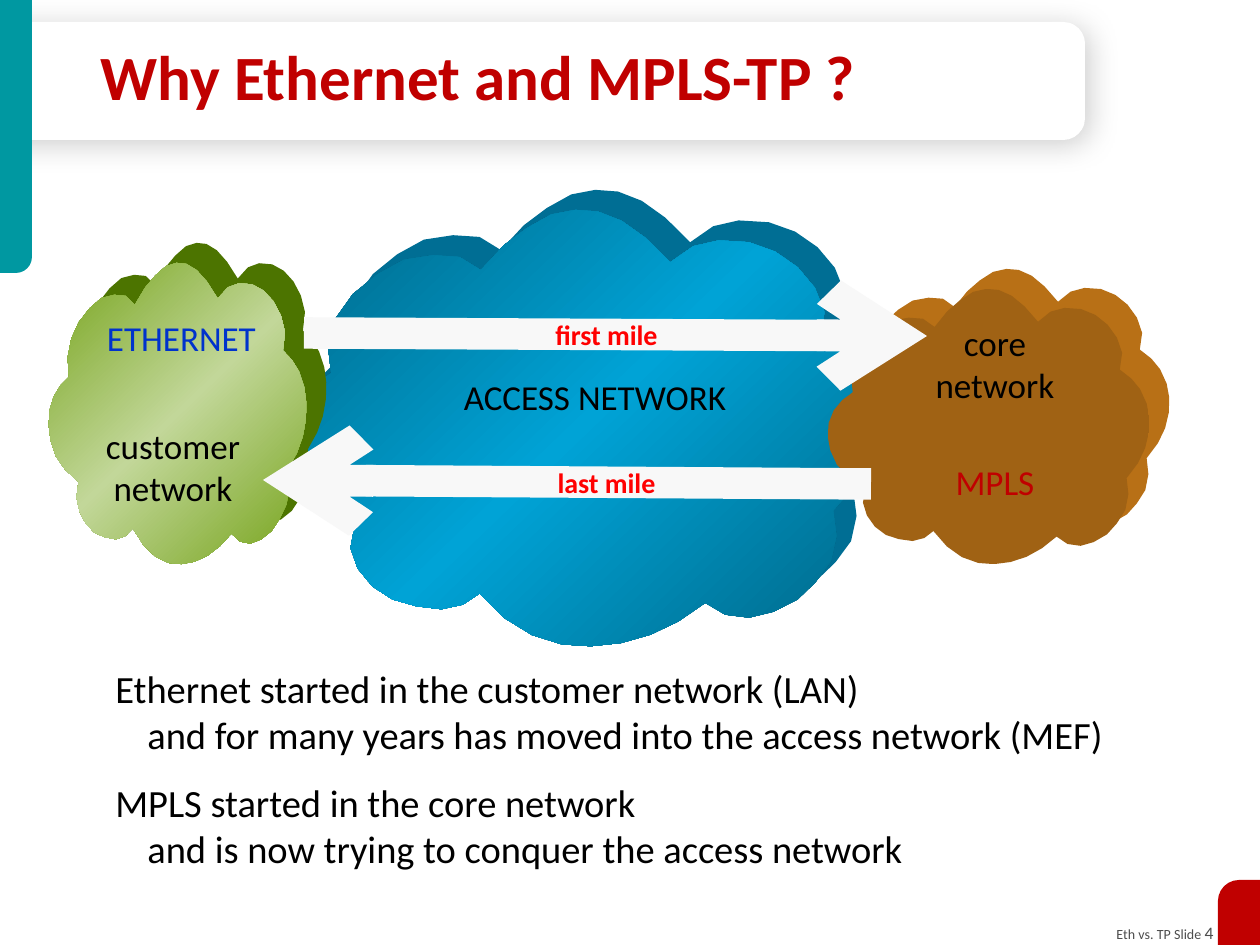
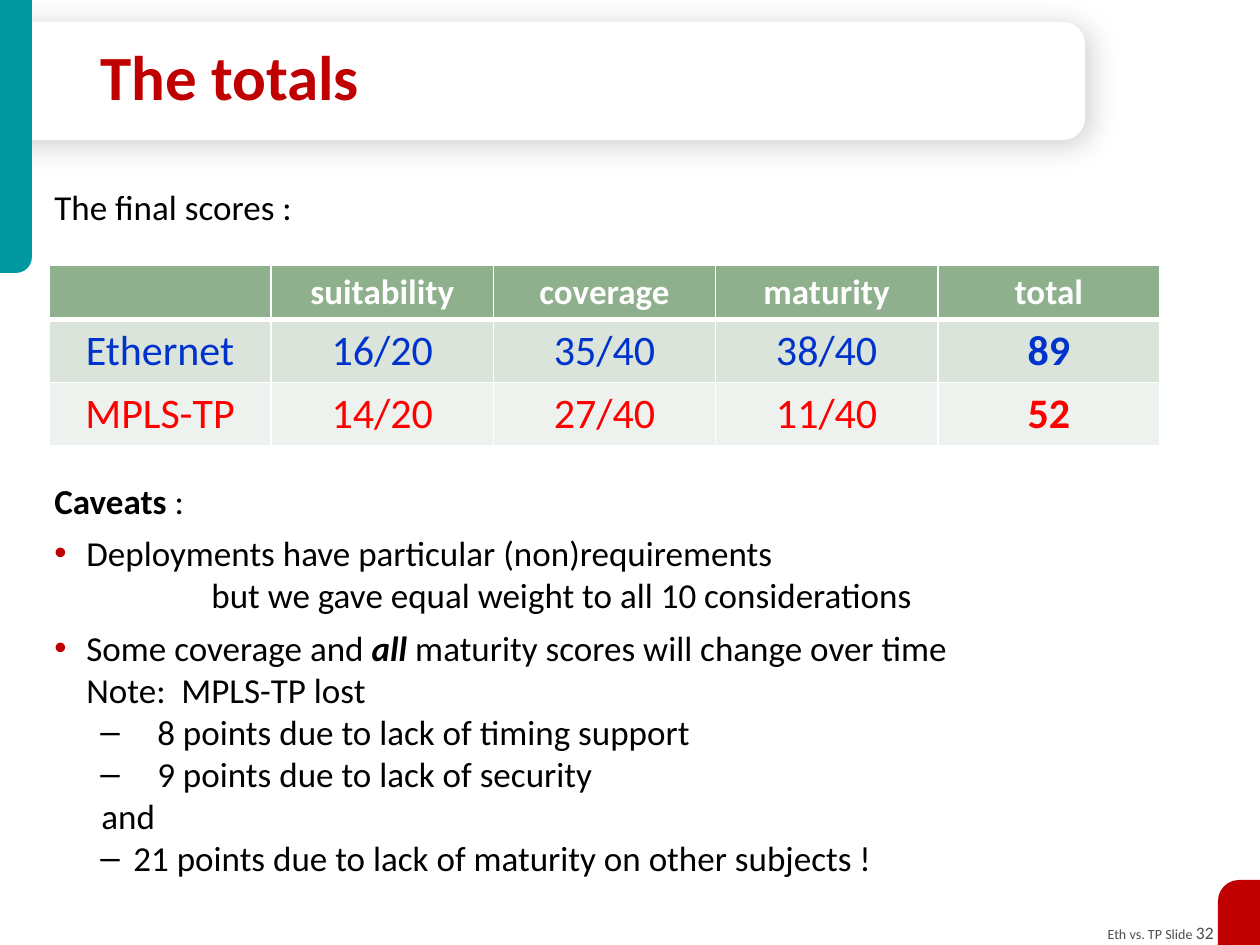
from lxml.etree import SubElement as sub
from pptx import Presentation
from pptx.dml.color import RGBColor as RGB
from pptx.enum.shapes import MSO_CONNECTOR as LINK, MSO_SHAPE as SHAPE
from pptx.enum.text import MSO_ANCHOR as ANCHOR, PP_ALIGN as ALIGN
from pptx.oxml.ns import qn
from pptx.util import Pt

FONT = "Calibri"
BLACK, WHITE = RGB(0, 0, 0), RGB(255, 255, 255)
GREY, PALE = RGB(0x4D, 0x4D, 0x4D), RGB(0xF8, 0xF8, 0xF8)
TEAL, CRIMSON = RGB(0, 0x98, 0xA1), RGB(0xC0, 0, 0)
RED, BLUE = RGB(255, 0, 0), RGB(0, 0x33, 0xCC)
SAGE, MIST, FOG = RGB(0x8F, 0xB0, 0x8C), RGB(0xDB, 0xE4, 0xDA), RGB(0xEE, 0xF2, 0xEE)
# Cloud colours: face edge, face middle, side
OCEAN = RGB(0, 0x65, 0x84), RGB(0, 0xA3, 0xD6), RGB(0, 0x6E, 0x94)
EARTH = RGB(0xA0, 0x62, 0x14), RGB(0xA0, 0x62, 0x14), RGB(0xB8, 0x70, 0x16)
GRASS = RGB(0x74, 0xA2, 0x18), RGB(0xC2, 0xD7, 0x99), RGB(0x4C, 0x74, 0)

DEPTH = 20
CLOUD_W, CLOUD_H = 466, 345
CLOUD = [
    (152, 49), (135, 39), (114, 38), (91, 42), (70, 54), (51, 70), (38, 89), (32, 111),
    (35, 133), (20, 143), (8, 156), (1, 172), (0, 189), (4, 206), (14, 224), (31, 239),
    (56, 253), (53, 271), (59, 287), (71, 301), (87, 311), (106, 316), (126, 318), (143, 314),
    (156, 305), (176, 324), (198, 337), (222, 344), (245, 345), (269, 342), (292, 335), (314, 324),
    (335, 309), (351, 318), (370, 320), (389, 315), (408, 305), (422, 291), (434, 274), (438, 254),
    (435, 234), (451, 215), (461, 196), (466, 176), (466, 157), (462, 140), (452, 122), (439, 109),
    (422, 98), (425, 77), (417, 58), (403, 42), (385, 30), (364, 23), (340, 22), (320, 27),
    (302, 40), (282, 21), (263, 8), (244, 1), (226, 0), (207, 4), (188, 15), (170, 29),
]


def px(n):
    return int(n * 914400 / 126)


def emu(box):
    return [px(n) for n in box]


def shift(box, x, y):
    return (box[0] + x, box[1] + y, *box[2:])


def style(run, size, color, bold=False):
    font = run.font
    font.name, font.size, font.bold = FONT, Pt(size), bold
    font.color.rgb = color


def write(slide, box, lines, size, color=BLACK, bold=False, align=ALIGN.LEFT):
    """Add a text box with one paragraph per line and return its frame."""
    frame = slide.shapes.add_textbox(*emu(box)).text_frame
    frame.word_wrap = True
    frame.text = "\n".join(lines)
    for par in frame.paragraphs:
        par.alignment = align
        for run in par.runs:
            style(run, size, color, bold)
    return frame


def indent(par, left, hang=0, mark=None, tint=BLACK):
    """Set left margin and hanging indent, with a bullet if mark is given."""
    props = par._p.get_or_add_pPr()
    props.set("marL", str(px(left)))
    props.set("indent", str(-px(hang)))
    if mark:
        sub(sub(props, qn("a:buClr")), qn("a:srgbClr"), val=str(tint))
        sub(props, qn("a:buFont"), typeface="Arial")
        sub(props, qn("a:buChar"), char=mark)


def panel(slide, kind, box, color, flip=None):
    shape = slide.shapes.add_shape(kind, *emu(box))
    shape.shadow.inherit = False
    shape.fill.solid()
    shape.fill.fore_color.rgb = color
    shape.line.fill.background()
    if flip:
        shape.adjustments[0] = 0.5
        shape._element.spPr.find(qn("a:xfrm")).set(flip, "1")
    return shape


def banner(slide, box):
    """Draw the title card, a tall shape turned a quarter to the right."""
    x, y, w, h = box
    turn = (w - h) / 2
    card = panel(slide, SHAPE.ROUND_2_SAME_RECTANGLE, (x + turn, y - turn, h, w), WHITE)
    card.rotation = 90
    card.adjustments[0] = 0.184
    card.adjustments[1] = 0
    effects = card._element.spPr.find(qn("a:effectLst"))
    shade = sub(effects, qn("a:outerShdw"), blurRad=str(Pt(17)), dist=str(Pt(3)),
                dir="2700000", algn="tl", rotWithShape="0")
    sub(sub(shade, qn("a:srgbClr"), val=str(BLACK)), qn("a:alpha"), val="19000")


def footer(slide, box, number):
    frame = write(slide, box, ["Eth vs. TP Slide "], 8, GREY, align=ALIGN.RIGHT)
    frame.word_wrap = False
    run = frame.paragraphs[0].add_run()
    run.text = str(number)
    style(run, 10, GREY)


def start(deck, title, number):
    """Add a slide with the shared bands, title and footer."""
    slide = deck.slides.add_slide(deck.slide_layouts[6])
    footer(slide, (1091, 916, 135, 34), number)
    banner(slide, (0, 22, 1085, 118))
    panel(slide, SHAPE.ROUND_1_RECTANGLE, (0, 0, 32, 273), TEAL, "flipV")
    panel(slide, SHAPE.ROUND_1_RECTANGLE, (1218, 880, 42, 65), CRIMSON, "flipH")
    frame = write(slide, (88, 37, 932, 89), [title], 36, CRIMSON, True)
    frame.vertical_anchor = ANCHOR.MIDDLE
    frame.paragraphs[0].line_spacing = 0.85
    return slide


def outline(slide, box):
    x, y, w, h = box
    dots = [(px(x + a * w / CLOUD_W), px(y + b * h / CLOUD_H)) for a, b in CLOUD]
    pen = slide.shapes.build_freeform(*dots[0])
    pen.add_line_segments(dots[1:], close=True)
    shape = pen.convert_to_shape()
    shape.rotation = 1.1
    shape.shadow.inherit = False
    shape.line.fill.background()
    return shape


def cloud(slide, box, colors):
    """Draw the side up to the right, then the shaded face."""
    edge, middle, side = colors
    fill = outline(slide, shift(box, DEPTH, -DEPTH)).fill
    fill.solid()
    fill.fore_color.rgb = side
    fill = outline(slide, box).fill
    fill.gradient()
    fill.gradient_angle = 315
    first, last = fill.gradient_stops
    for stop in (first, last):
        stop.color.rgb = edge
    stops = first._gs.getparent()
    center = sub(stops, qn("a:gs"), pos="50000")
    sub(center, qn("a:srgbClr"), val=str(middle))
    stops.insert(1, center)


def arrow(slide, ends):
    line = slide.shapes.add_connector(LINK.STRAIGHT, *emu(ends))
    line.line.color.rgb = PALE
    line.line.width = Pt(18)
    sub(line.line._get_or_add_ln(), qn("a:tailEnd"), type="arrow")
    sub(line._element.spPr, qn("a:effectLst"))


def network(slide, box):
    """Draw the three clouds, their labels and the two mile arrows."""
    x, y = box[:2]
    for spot, colors in (((237, 20, 588, 436), OCEAN),
                         ((779, 99, 321, 275), EARTH),
                         ((0, 73, 257, 301), GRASS)):
        cloud(slide, shift(spot, x, y), colors)
    for spot, lines, color in (
        ((15, 228, 218, 97), ["customer network"], BLACK),
        ((309, 179, 474, 55), ["ACCESS NETWORK"], BLACK),
        ((842, 125, 208, 97), ["core", "network"], BLACK),
        ((-4, 120, 273, 55), ["ETHERNET"], BLUE),
        ((873, 264, 146, 55), ["MPLS"], CRIMSON),
    ):
        write(slide, shift(spot, x, y), lines, 20, color, align=ALIGN.CENTER)
    for x1, y1, x2, y2 in ((255, 143, 878, 146), (822, 294, 214, 290)):
        arrow(slide, (x + x1, y + y1, x + x2, y + y2))
    for top, name in ((121, "first mile"), (269, "last mile")):
        write(slide, (x + 459, y + top, 197, 47), [name], 16, RED, True, ALIGN.CENTER)


def story(slide, box):
    lines = [
        "Ethernet started in the customer network (LAN)\v"
        "and for many years has moved into the access network (MEF)",
        "MPLS started in the core network\vand is now trying to conquer the access network",
    ]
    frame = write(slide, box, lines, 22)
    for par in frame.paragraphs:
        indent(par, 32, 32)
    frame.paragraphs[1].space_before = Pt(12)


def border(cell, bottom):
    props = cell._tc.get_or_add_tcPr()
    for side, width in (("L", 1), ("R", 1), ("T", 1), ("B", bottom)):
        line = sub(props, qn("a:ln" + side), w=str(Pt(width)))
        sub(sub(line, qn("a:solidFill")), qn("a:srgbClr"), val=str(WHITE))


def scores(slide, box):
    rows = [
        (["", "suitability", "coverage", "maturity", "total"], 54, SAGE, WHITE, 20),
        (["Ethernet", "16/20", "35/40", "38/40", "89"], 63, MIST, BLUE, 24),
        (["MPLS-TP", "14/20", "27/40", "11/40", "52"], 63, FOG, RED, 24),
    ]
    count = len(rows[0][0])
    table = slide.shapes.add_table(len(rows), count, *emu(box)).table
    for column in table.columns:
        column.width = px(box[2] / count)
    for r, (texts, height, back, color, size) in enumerate(rows):
        table.rows[r].height = px(height)
        for c, text in enumerate(texts):
            cell = table.cell(r, c)
            border(cell, 1 if r else 3)
            cell.fill.solid()
            cell.fill.fore_color.rgb = back
            par = cell.text_frame.paragraphs[0]
            par.text = text
            par.alignment = ALIGN.CENTER
            for run in par.runs:
                style(run, size, color, r == 0 or c == count - 1)


def caveats(slide, box):
    dot, dash = (32, 32, "•", CRIMSON), (103, 57, "–")
    items = [
        (["Caveats ", ":"], (0,), 0),
        (["Deployments have particular (non)requirements"], dot, 6),
        (["but we gave equal weight to all 10 considerations"], (157,), 0),
        (["Some coverage and ", "all", " maturity scores will change over time"], dot, 6),
        (["Note:  MPLS-TP lost"], (32,), 0),
        (["8 points due to lack of timing support"], dash, 0),
        (["9 points due to lack of security"], dash, 0),
        (["and"], (47,), 0),
        (["21 points due to lack of maturity on other subjects !"], (79, 33, "–"), 0),
    ]
    frame = write(slide, box, [""] * len(items), 20)
    for par, (parts, inset, gap) in zip(frame.paragraphs, items):
        if gap:
            par.space_before = Pt(gap)
        indent(par, *inset)
        for part in parts:
            run = par.add_run()
            run.text = part
            style(run, 20, BLACK, part in ("Caveats ", "all"))
            run.font.italic = part == "all"


def main():
    deck = Presentation()
    deck.slide_width, deck.slide_height = px(1260), px(945)

    slide = start(deck, "Why Ethernet and MPLS-TP ?", 4)
    story(slide, (103, 659, 1053, 218))
    network(slide, (49, 190, 1122, 456))

    slide = start(deck, "The totals", 32)
    write(slide, (42, 179, 1147, 55), ["The final scores :"], 20)
    caveats(slide, (42, 473, 1147, 428))
    scores(slide, (49, 265, 1111, 180))

    deck.save("out.pptx")


if __name__ == "__main__":
    main()
